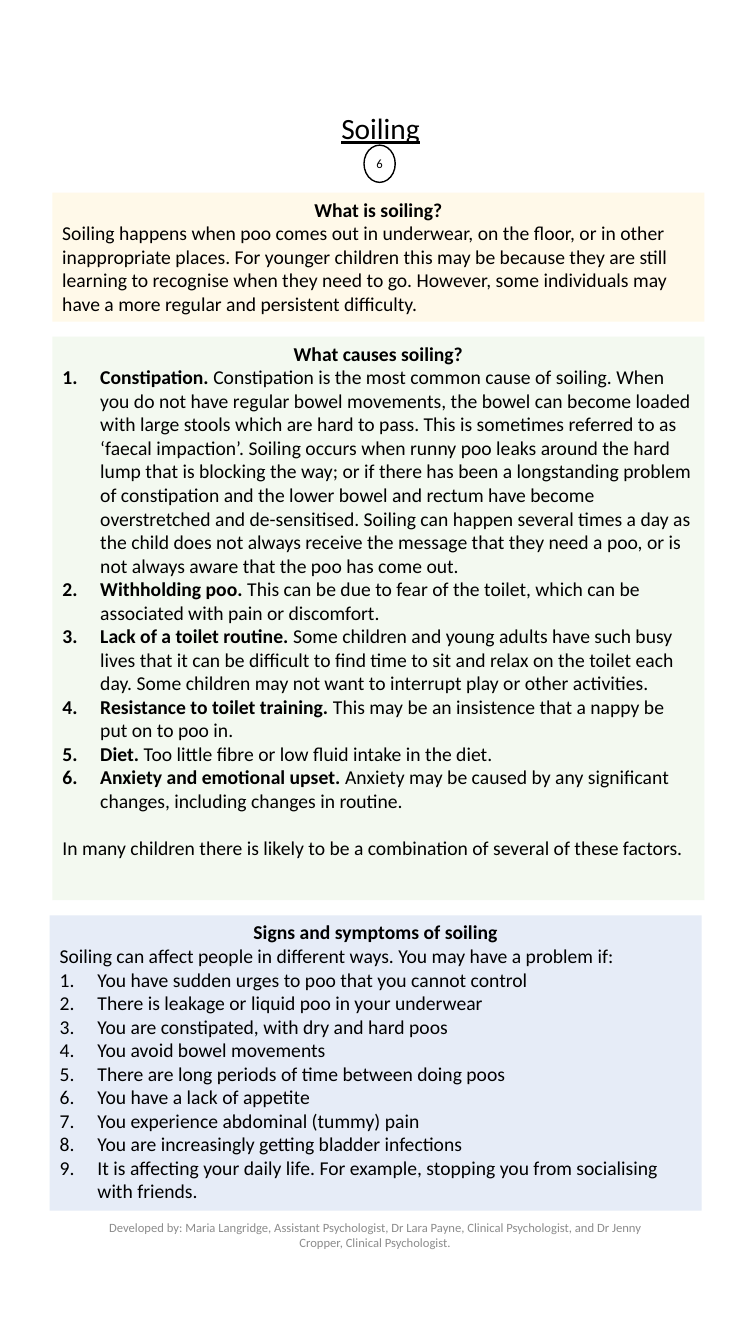
from lxml.etree import SubElement
from pptx import Presentation
from pptx.dml.color import RGBColor
from pptx.enum.shapes import MSO_SHAPE
from pptx.enum.text import MSO_ANCHOR, MSO_AUTO_SIZE, PP_ALIGN
from pptx.oxml.ns import qn
from pptx.util import Pt

FONT = "Calibri"
PANEL_LEFT, PANEL_TOP, PANEL_WIDTH, PANEL_GAP = 37.4, 137.5, 465.8, 10.8
DEFINITION_HEIGHT, CAUSES_HEIGHT, SIGNS_HEIGHT = 92.2, 402.5, 211

DEFINITION = (
    "Soiling happens when poo comes out in underwear, on the floor, or in other "
    "inappropriate places. For younger children this may be because they are still "
    "learning to recognise when they need to go. However, some individuals may have "
    "a more regular and persistent difficulty."
)
CAUSES = [
    ("Constipation. ",
     "Constipation is the most common cause of soiling. When you do not have regular "
     "bowel movements, the bowel can become loaded with large stools which are hard to "
     "pass. This is sometimes referred to as ‘faecal impaction’. Soiling occurs when "
     "runny poo leaks around the hard lump that is blocking the way; or if there has "
     "been a longstanding problem of constipation and the lower bowel and rectum have "
     "become overstretched and de-sensitised. Soiling can happen several times a day as "
     "the child does not always receive the message that they need a poo, or is not "
     "always aware that the poo has come out."),
    ("Withholding poo. ",
     "This can be due to fear of the toilet, which can be associated with pain or "
     "discomfort."),
    ("Lack of a toilet routine. ",
     "Some children and young adults have such busy lives that it can be difficult to "
     "find time to sit and relax on the toilet each day. Some children may not want to "
     "interrupt play or other activities."),
    ("Resistance to toilet training. ",
     "This may be an insistence that a nappy be put on to poo in."),
    ("Diet. ", "Too little fibre or low fluid intake in the diet."),
    ("Anxiety and emotional upset. ",
     "Anxiety may be caused by any significant changes, including changes in routine."),
]
COMBINATION = ("In many children there is likely to be a combination of several of "
               "these factors.")
SIGNS_INTRO = "Soiling can affect people in different ways. You may have a problem if:"
SIGNS = [
    "You have sudden urges to poo that you cannot control",
    "There is leakage or liquid poo in your underwear",
    "You are constipated, with dry and hard poos",
    "You avoid bowel movements",
    "There are long periods of time between doing poos",
    "You have a lack of appetite",
    "You experience abdominal (tummy) pain",
    "You are increasingly getting bladder infections",
    "It is affecting your daily life. For example, stopping you from socialising with "
    "friends.",
]
CREDIT = ("Developed by: Maria Langridge, Assistant Psychologist, Dr Lara Payne, "
          "Clinical Psychologist, and Dr Jenny Cropper, Clinical Psychologist.")


def colour(hex_string):
    return RGBColor.from_string(hex_string)


class Leaflet:
    """Holds the text style and the slide being filled."""

    def __init__(self, slide, size=14, ink="000000"):
        self.slide, self.size, self.ink = slide, size, ink

    def place(self, shape, left, top, width, height):
        shape.left, shape.top = Pt(left), Pt(top)
        shape.width, shape.height = Pt(width), Pt(height)

    def style(self, run, size=None, ink=None, bold=False):
        run.font.name, run.font.size = FONT, Pt(size or self.size)
        run.font.bold = bold
        run.font.color.rgb = colour(ink or self.ink)

    def title(self, wording, *box):
        heading = self.slide.shapes.title
        self.place(heading, *box)
        heading.text_frame.text = wording
        heading.text_frame.vertical_anchor = MSO_ANCHOR.MIDDLE
        paragraph = heading.text_frame.paragraphs[0]
        paragraph.line_spacing = 0.9
        self.style(paragraph.runs[0], 21)
        paragraph.runs[0].font.underline = True

    def page_number(self, number, *box):
        badge = self.slide.shapes.add_shape(MSO_SHAPE.OVAL, *map(Pt, box))
        badge.shadow.inherit = False
        badge.fill.background()
        badge.line.color.rgb, badge.line.width = colour(self.ink), Pt(1)
        frame = badge.text_frame
        frame.margin_left = frame.margin_right = 0
        self.caption(frame, number, self.ink)

    def credit(self, wording, *box):
        frame = self.slide.shapes.add_textbox(*map(Pt, box)).text_frame
        frame.word_wrap = True
        self.caption(frame, wording, "8C8C8C")

    def caption(self, frame, wording, ink):
        frame.text = wording
        frame.vertical_anchor = MSO_ANCHOR.MIDDLE
        frame.paragraphs[0].alignment = PP_ALIGN.CENTER
        self.style(frame.paragraphs[0].runs[0], 9, ink)

    def rectangle(self, *box):
        block = self.slide.shapes.add_shape(MSO_SHAPE.RECTANGLE, *map(Pt, box))
        block.shadow.inherit = False
        return block

    def panel(self, block, heading, tint, opacity):
        """Tint a block and give it a bold, centred heading."""
        block.fill.solid()
        block.fill.fore_color.rgb = colour(tint)
        tint_xml = block.fill._xPr.find(qn("a:solidFill"))[0]
        SubElement(tint_xml, qn("a:alpha"), val=str(opacity * 1000))
        block.line.fill.background()
        frame = block.text_frame
        frame.word_wrap, frame.auto_size = True, MSO_AUTO_SIZE.NONE
        frame.vertical_anchor = MSO_ANCHOR.TOP
        frame.text = heading
        self.format_paragraph(frame.paragraphs[0], PP_ALIGN.CENTER)
        self.style(frame.paragraphs[0].runs[0], bold=True)
        return frame

    def format_paragraph(self, paragraph, alignment=PP_ALIGN.LEFT, numbered=False, gap=0):
        paragraph.alignment = alignment
        paragraph.space_before = Pt(gap)
        properties = paragraph._p.get_or_add_pPr()
        indent = Pt(27) if numbered else 0
        properties.set("marL", str(indent))
        properties.set("indent", str(-indent))
        if numbered:
            SubElement(properties, qn("a:buFont"), typeface="+mj-lt")
            SubElement(properties, qn("a:buAutoNum"), type="arabicPeriod")
        else:
            SubElement(properties, qn("a:buNone"))

    def add_text(self, frame, wording, lead="", numbered=False, gap=0):
        """Append a paragraph, opened by a bold lead if there is one."""
        paragraph = frame.add_paragraph()
        paragraph.text = lead or wording
        self.style(paragraph.runs[0], bold=bool(lead))
        if lead:
            explanation = paragraph.add_run()
            explanation.text = wording
            self.style(explanation)
        self.format_paragraph(paragraph, numbered=numbered, gap=gap)


def main():
    presentation = Presentation()
    presentation.slide_width, presentation.slide_height = Pt(540), Pt(960)
    slide = presentation.slides.add_slide(presentation.slide_layouts.get_by_name("Two Content"))
    leaflet = Leaflet(slide)
    causes_block, signs_block = slide.placeholders[1], slide.placeholders[2]
    causes_top = PANEL_TOP + DEFINITION_HEIGHT + PANEL_GAP
    signs_top = causes_top + CAUSES_HEIGHT + PANEL_GAP

    leaflet.title("Soiling", 131.8, 46.8, 280, 92.2)

    definition_block = leaflet.rectangle(PANEL_LEFT, PANEL_TOP, PANEL_WIDTH, DEFINITION_HEIGHT)
    definition = leaflet.panel(definition_block, "What is soiling?", "FFF2CC", 42)
    leaflet.add_text(definition, DEFINITION)

    leaflet.place(causes_block, PANEL_LEFT, causes_top, PANEL_WIDTH, CAUSES_HEIGHT)
    causes = leaflet.panel(causes_block, "What causes soiling?", "E2F0D9", 39)
    for cause, explanation in CAUSES:
        leaflet.add_text(causes, explanation, lead=cause, numbered=True)
    leaflet.add_text(causes, COMBINATION, gap=17)

    leaflet.place(signs_block, PANEL_LEFT - 2, signs_top, PANEL_WIDTH, SIGNS_HEIGHT)
    signs = leaflet.panel(signs_block, "Signs and symptoms of soiling", "DAE3F3", 66)
    leaflet.add_text(signs, SIGNS_INTRO)
    for sign in SIGNS:
        leaflet.add_text(signs, sign, numbered=True)

    leaflet.page_number("6", 260, 103.7, 22.3, 26.6)
    leaflet.credit(CREDIT, 65.5, 856.8, 404.6, 51.1)
    presentation.save("out.pptx")


if __name__ == "__main__":
    main()
